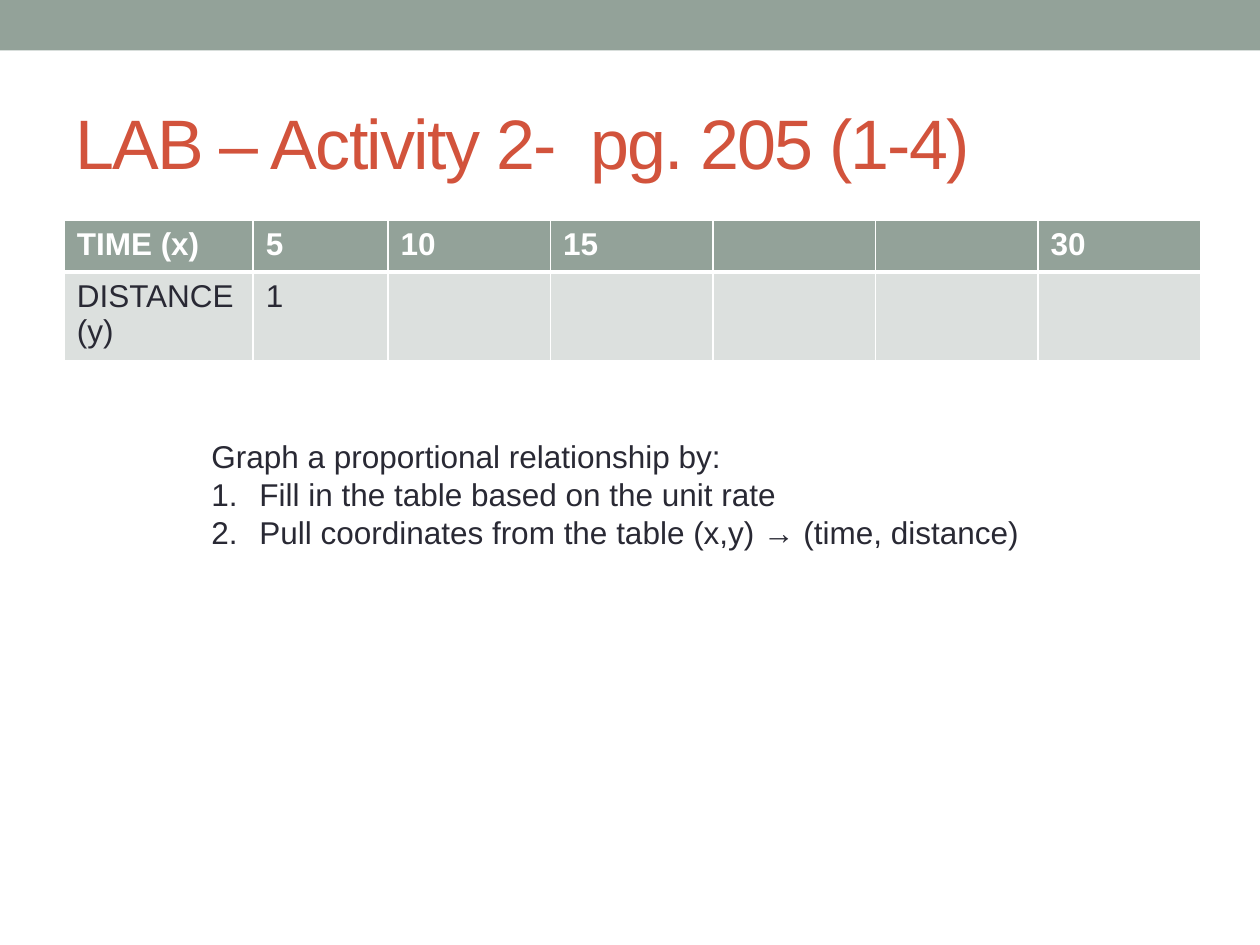
from lxml import etree
from pptx import Presentation
from pptx.dml.color import RGBColor
from pptx.enum.shapes import MSO_SHAPE
from pptx.enum.text import MSO_ANCHOR
from pptx.oxml.ns import qn
from pptx.util import Inches, Pt

RECTANGLE = MSO_SHAPE.RECTANGLE
TOP, MIDDLE = MSO_ANCHOR.TOP, MSO_ANCHOR.MIDDLE
WIDTH, HEIGHT = 10, 7.5
MARGIN = 0.05 * WIDTH
SAGE, PALE, WHITE, INK, BRICK = "93A299", "DCE0DE", "FFFFFF", "292934", "D2533C"
READINGS = [
    ["TIME (x)", "5", "10", "15", "", "", "30"],
    ["DISTANCE (y)", "1", "", "", "", "", ""],
]
COLUMN_WIDTHS = [1.5, 1.07] + [1.29] * 5
ROW_HEIGHT = 0.41
STEPS = [
    "Fill in the table based on the unit rate",
    "Pull coordinates from the table (x,y) → (time, distance)",
]


def color(hex_value):
    """Return the colour for a hex string."""
    return RGBColor.from_string(hex_value)


def write(paragraph, text, size=18, ink=INK, bold=False, spacing=0):
    """Add formatted text to a paragraph, with letter spacing in points."""
    run = paragraph.add_run()
    run.text = text
    run.font.name = "Arial"
    run.font.size = Pt(size)
    run.font.bold = bold
    run.font.color.rgb = color(ink)
    if spacing:
        run._r.get_or_add_rPr().set("spc", str(spacing * 100))


def number(paragraph, indent=0.38):
    """Make a paragraph an item of a numbered list."""
    properties = paragraph._p.get_or_add_pPr()
    properties.set("marL", str(Inches(indent)))
    properties.set("indent", str(-Inches(indent)))
    etree.SubElement(properties, qn("a:buFont"), typeface="+mj-lt")
    etree.SubElement(properties, qn("a:buAutoNum"), type="arabicPeriod")


def add_band(slide, height):
    """Add the coloured band along the top edge."""
    band = slide.shapes.add_shape(RECTANGLE, 0, 0, Inches(WIDTH), Inches(height))
    band.shadow.inherit = False
    band.fill.solid()
    band.fill.fore_color.rgb = color(SAGE)
    band.line.fill.background()


def add_text_frame(slide, left, top, width, height, anchor=TOP):
    """Add a wrapping text box and return its frame."""
    frame = slide.shapes.add_textbox(*map(Inches, (left, top, width, height))).text_frame
    frame.word_wrap = True
    frame.vertical_anchor = anchor
    return frame


def style_cell(cell, fill, borders):
    """Set a cell's white borders, given in points by side, and its fill."""
    properties = cell._tc.get_or_add_tcPr()
    for side, points in borders.items():
        border = etree.SubElement(properties, qn(f"a:ln{side}"), w=str(Pt(points)))
        solid = etree.SubElement(border, qn("a:solidFill"))
        etree.SubElement(solid, qn("a:srgbClr"), val=WHITE)
    cell.fill.solid()
    cell.fill.fore_color.rgb = color(fill)


def add_readings(slide, top):
    """Add the table of times and distances."""
    table = slide.shapes.add_table(
        len(READINGS), len(COLUMN_WIDTHS), Inches(MARGIN + 0.01), Inches(top),
        Inches(sum(COLUMN_WIDTHS)), Inches(ROW_HEIGHT * len(READINGS)),
    ).table
    for column, width in zip(table.columns, COLUMN_WIDTHS):
        column.width = Inches(width)
    for row, values in enumerate(READINGS):
        header = row == 0
        borders = {"L": 1, "R": 1, "T": 1 if header else 3, "B": 3 if header else 1}
        for column, value in enumerate(values):
            cell = table.cell(row, column)
            style_cell(cell, SAGE if header else PALE, borders)
            if value:
                write(cell.text_frame.paragraphs[0], value,
                      ink=WHITE if header else INK, bold=header)


def add_instructions(slide):
    """Add the lead-in and its numbered steps."""
    frame = add_text_frame(slide, 1.58, 3.42, 6.75, 1.62)
    write(frame.paragraphs[0], "Graph a proportional relationship by:")
    for step in STEPS:
        paragraph = frame.add_paragraph()
        number(paragraph)
        write(paragraph, step)


def main():
    """Build and save the slide."""
    presentation = Presentation()
    presentation.slide_width, presentation.slide_height = Inches(WIDTH), Inches(HEIGHT)
    slide = presentation.slides.add_slide(presentation.slide_layouts[6])
    add_band(slide, 0.4)
    title = add_text_frame(slide, MARGIN, 0.58, WIDTH - 2 * MARGIN, 1.08, MIDDLE)
    write(title.paragraphs[0], "LAB – Activity 2-  pg. 205 (1-4)",
          size=40, ink=BRICK, spacing=-1)
    add_readings(slide, 1.75)
    add_instructions(slide)
    presentation.save("out.pptx")


if __name__ == "__main__":
    main()
